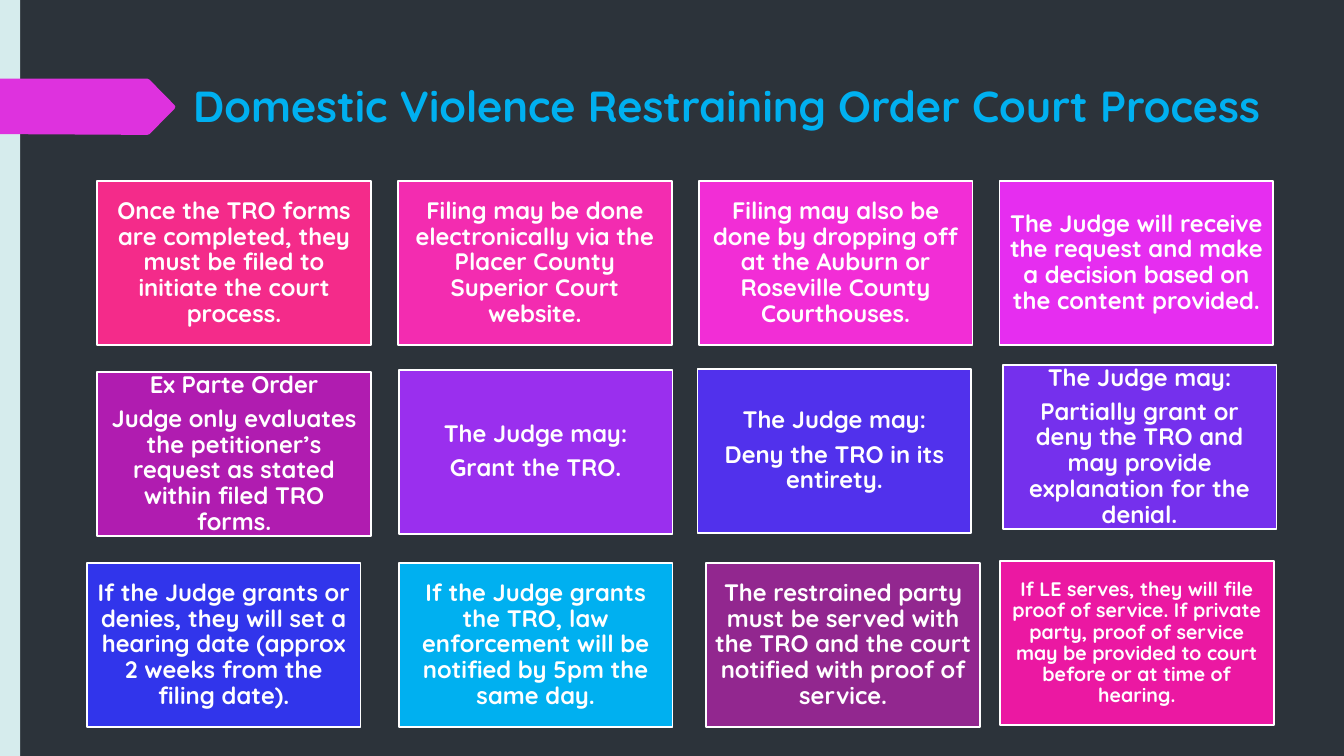
"""Build the slide on the domestic violence restraining order court process."""
from dataclasses import dataclass

import pptx
import pptx.dml.color
import pptx.enum.shapes
import pptx.enum.text
import pptx.slide
import pptx.util
from pptx.dml.color import RGBColor
from pptx.util import Cm

FONT = "Quicksand"
SLATE = RGBColor(0x2C, 0x33, 0x3A)
MINT = RGBColor(0xD6, 0xEC, 0xED)
ORCHID = RGBColor(0xDE, 0x32, 0xDE)
SKY = RGBColor(0x00, 0xB0, 0xF0)
WHITE = RGBColor(0xFF, 0xFF, 0xFF)
ROSE = RGBColor(0xF4, 0x2B, 0x8A)
PINK = RGBColor(0xF3, 0x2C, 0xB0)
FUCHSIA = RGBColor(0xF2, 0x2D, 0xD6)
MAGENTA = RGBColor(0xE6, 0x2D, 0xF0)
PLUM = RGBColor(0xB0, 0x1C, 0xB0)
VIOLET = RGBColor(0x9A, 0x2F, 0xEE)
INDIGO = RGBColor(0x51, 0x31, 0xEC)
PURPLE = RGBColor(0x75, 0x30, 0xED)
BLUE = RGBColor(0x31, 0x35, 0xEB)
MULBERRY = RGBColor(0x92, 0x27, 0x8F)
CERISE = RGBColor(0xEB, 0x18, 0xA2)

SLIDE_WIDTH, SLIDE_HEIGHT = 33.87, 19.05
CARD_WIDTH, CARD_HEIGHT = 6.9, 4.14
CARD_INSET = 0.17


@dataclass(frozen=True)
class Card:
    """One step of the process, with its place in centimetres."""

    left: float
    top: float
    fill: RGBColor
    lines: tuple[str, ...]
    size: float = 17


CARDS = (
    Card(2.45, 4.56, ROSE, (
        "Once the TRO forms are completed, they must be filed to initiate the court process.",)),
    Card(10.03, 4.56, PINK, (
        "Filing may be done electronically via the Placer County Superior Court website.",)),
    Card(17.61, 4.56, FUCHSIA, (
        "Filing may also be done by dropping off at the Auburn or Roseville County Courthouses.",)),
    Card(25.19, 4.56, MAGENTA, (
        "The Judge will receive the request and make a decision based on the content provided.",)),
    Card(2.45, 9.37, PLUM, (
        "Ex Parte Order",
        "Judge only evaluates the petitioner’s request as stated within filed TRO forms.")),
    Card(10.05, 9.32, VIOLET, ("The Judge may:", "Grant the TRO.")),
    Card(17.58, 9.3, INDIGO, ("The Judge may:", "Deny the TRO in its entirety.")),
    Card(25.27, 9.19, PURPLE, (
        "The Judge may:",
        "Partially grant or deny the TRO and may provide explanation for the denial.")),
    Card(2.19, 14.19, BLUE, (
        "If the Judge grants or denies, they will set a hearing date "
        "(approx 2 weeks from the filing date).",)),
    Card(10.05, 14.19, SKY, (
        "If the Judge grants the TRO, law enforcement will be notified by 5pm the same day.",)),
    Card(17.8, 14.19, MULBERRY, (
        "The restrained party must be served with the TRO and the court notified "
        "with proof of service.",)),
    Card(25.2, 14.14, CERISE, (
        "If LE serves, they will file proof of service. If private party, proof of service "
        "may be provided to court before or at time of hearing.",), 14),
)

ARROW_OUTLINE = (
    (0, 1.98), (3.71, 1.98), (3.77, 2.01), (4.4, 2.65), (4.42, 2.69),
    (4.4, 2.74), (3.77, 3.38), (3.71, 3.4), (0, 3.38),
)


def style_font(font: pptx.text.text.Font, size: float, color: RGBColor) -> None:
    """Set the slide's bold typeface with a size and colour."""
    font.name = FONT
    font.size = pptx.util.Pt(size)
    font.bold = True
    font.color.rgb = color


def add_side_band(page: pptx.slide.Slide) -> None:
    """Draw the pale band down the left edge."""
    band = page.shapes.add_shape(
        pptx.enum.shapes.MSO_SHAPE.RECTANGLE, 0, 0, Cm(0.51), Cm(SLIDE_HEIGHT))
    band.shadow.inherit = False
    band.fill.solid()
    band.fill.fore_color.rgb = MINT
    band.line.fill.background()


def add_title_arrow(page: pptx.slide.Slide) -> None:
    """Draw the arrow that points at the title."""
    start, *rest = [(Cm(x), Cm(y)) for x, y in ARROW_OUTLINE]
    builder = page.shapes.build_freeform(*start)
    builder.add_line_segments(rest, close=True)
    arrow = builder.convert_to_shape()
    arrow.shadow.inherit = False
    arrow.fill.solid()
    arrow.fill.fore_color.rgb = ORCHID
    arrow.line.fill.background()


def add_title(page: pptx.slide.Slide) -> None:
    """Write the slide title."""
    box = page.shapes.add_textbox(Cm(4.62), Cm(1.88), Cm(28.63), Cm(2.11))
    box.text_frame.word_wrap = True
    para = box.text_frame.paragraphs[0]
    para.text = "Domestic Violence Restraining Order Court Process"
    style_font(para.font, 31, SKY)


def add_card(page: pptx.slide.Slide, card: Card) -> None:
    """Draw one step of the process with its centred text."""
    box = page.shapes.add_shape(
        pptx.enum.shapes.MSO_SHAPE.RECTANGLE,
        Cm(card.left), Cm(card.top), Cm(CARD_WIDTH), Cm(CARD_HEIGHT))
    box.shadow.inherit = False
    box.fill.solid()
    box.fill.fore_color.rgb = card.fill
    box.line.color.rgb = WHITE
    box.line.width = pptx.util.Pt(1.25)
    frame = box.text_frame
    frame.word_wrap = True
    frame.vertical_anchor = pptx.enum.text.MSO_ANCHOR.MIDDLE
    frame.margin_left = frame.margin_right = Cm(CARD_INSET)
    frame.margin_top = frame.margin_bottom = Cm(CARD_INSET)
    for index, line in enumerate(card.lines):
        para = frame.add_paragraph() if index else frame.paragraphs[0]
        para.text = line
        para.alignment = pptx.enum.text.PP_ALIGN.CENTER
        para.line_spacing = 0.9
        para.space_after = pptx.util.Pt(6 if index < len(card.lines) - 1 else 0)
        style_font(para.font, card.size, WHITE)


def main() -> None:
    """Build and save the deck."""
    deck = pptx.Presentation()
    deck.slide_width = Cm(SLIDE_WIDTH)
    deck.slide_height = Cm(SLIDE_HEIGHT)
    page = deck.slides.add_slide(deck.slide_layouts[6])
    page.background.fill.solid()
    page.background.fill.fore_color.rgb = SLATE
    add_side_band(page)
    add_title_arrow(page)
    add_title(page)
    for card in CARDS:
        add_card(page, card)
    deck.save("out.pptx")


if __name__ == "__main__":
    main()
